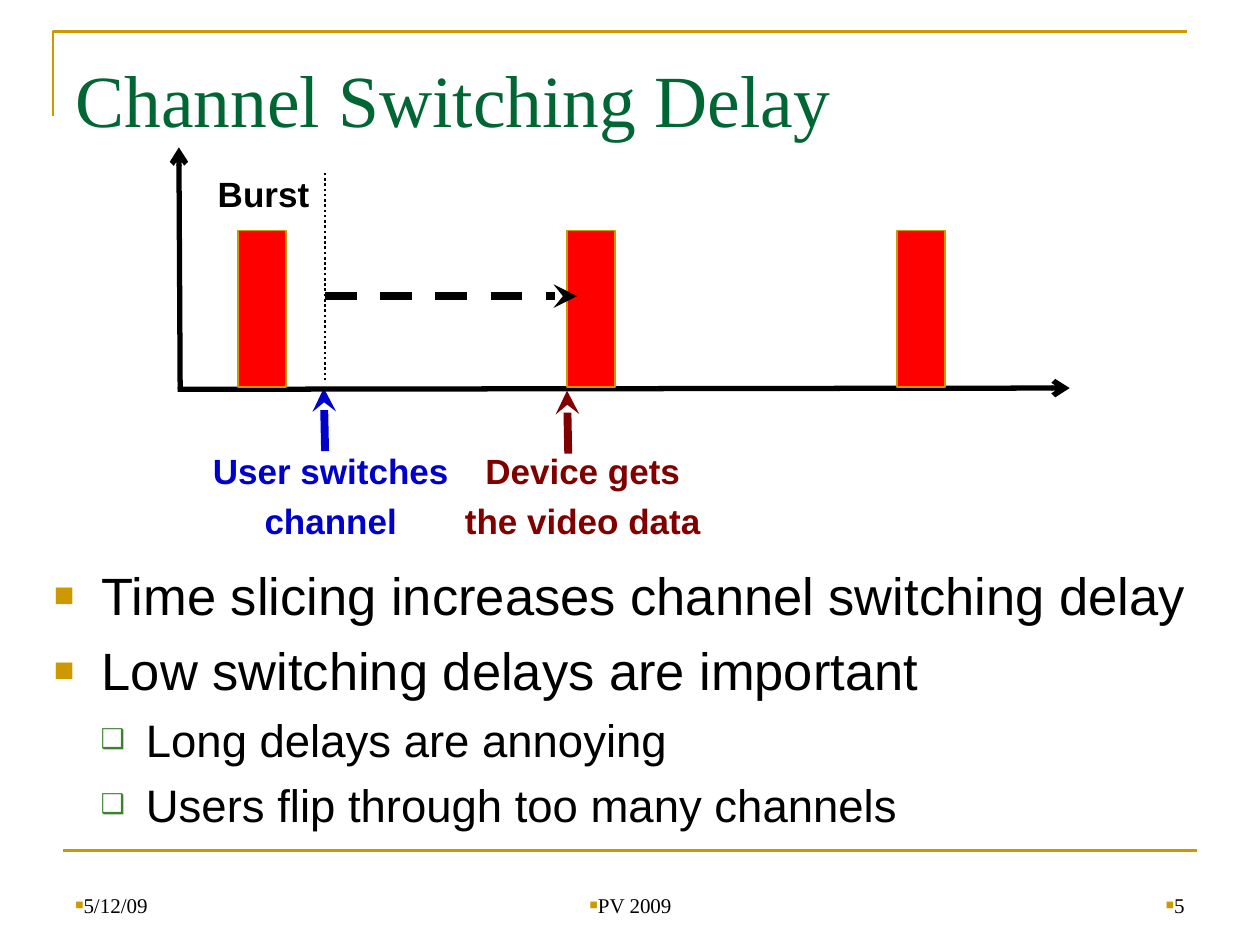
from dataclasses import dataclass
from typing import Optional

from lxml.etree import SubElement
from pptx import Presentation
from pptx.dml.color import RGBColor
from pptx.enum.dml import MSO_LINE_DASH_STYLE as Dash
from pptx.enum.shapes import MSO_CONNECTOR as Connector, MSO_SHAPE as Shape
from pptx.enum.text import MSO_ANCHOR as Anchor, PP_ALIGN as Align
from pptx.oxml.ns import qn
from pptx.util import Inches, Pt


@dataclass(frozen=True)
class Theme:
    gold: str = "CC9900"
    title: str = "006633"
    green: str = "3B812F"
    black: str = "000000"
    blue: str = "0000CC"
    maroon: str = "800000"
    red: str = "FF0000"
    serif: str = "Times New Roman"
    sans: str = "Arial"
    title_size: float = 42
    body_size: float = 30
    sub_size: float = 26
    label_size: float = 20
    footer_size: float = 12
    space_before: float = 0.23  # share of the type size


THEME = Theme()


@dataclass(frozen=True)
class Bullet:
    character: str
    color: str
    percent: int
    left: float = 0
    hanging: float = 0


@dataclass(frozen=True)
class Line:
    text: str
    size: float
    color: str = THEME.black
    font: str = THEME.sans
    bold: bool = False
    align: Align = Align.LEFT
    spaced: bool = True
    level: int = 0
    bullet: Optional[Bullet] = None


@dataclass(frozen=True)
class Arrow:
    start: tuple[float, float]
    end: tuple[float, float]
    color: str
    width: float
    head: Optional[str] = None
    dash: Optional[Dash] = None


def add_bullet(paragraph, bullet: Bullet) -> None:
    properties = paragraph._p.get_or_add_pPr()
    properties.set("marL", str(Inches(bullet.left)))
    properties.set("indent", str(Inches(-bullet.hanging)))
    color = SubElement(properties, qn("a:buClr"))
    SubElement(color, qn("a:srgbClr"), val=bullet.color)
    SubElement(properties, qn("a:buSzPct"), val=str(bullet.percent * 1000))
    SubElement(properties, qn("a:buFont"), typeface=THEME.sans)
    SubElement(properties, qn("a:buChar"), char=bullet.character)


def add_text(slide, box: tuple[float, float, float, float], lines: list[Line],
             wrap: bool = True, anchor: Anchor = Anchor.TOP, top_inset: float = 0.05) -> None:
    text_frame = slide.shapes.add_textbox(*map(Inches, box)).text_frame
    text_frame.word_wrap = wrap
    text_frame.vertical_anchor = anchor
    text_frame.margin_top = Inches(top_inset)
    text_frame.text = "\n".join(line.text for line in lines)
    for paragraph, line in zip(text_frame.paragraphs, lines):
        paragraph.alignment = line.align
        paragraph.level = line.level
        if line.spaced:
            paragraph.space_before = Pt(round(line.size * THEME.space_before, 1))
        if line.bullet:
            add_bullet(paragraph, line.bullet)
        for run in paragraph.runs:
            run.font.name = line.font
            run.font.size = Pt(line.size)
            run.font.bold = line.bold
            run.font.color.rgb = RGBColor.from_string(line.color)


def add_line(slide, arrow: Arrow) -> None:
    connector = slide.shapes.add_connector(
        Connector.STRAIGHT, *map(Inches, arrow.start + arrow.end))
    connector.line.color.rgb = RGBColor.from_string(arrow.color)
    connector.line.width = Pt(arrow.width)
    if arrow.dash:
        connector.line.dash_style = arrow.dash
    if arrow.head:
        SubElement(connector.line._get_or_add_ln(), qn("a:tailEnd"), type=arrow.head)
    SubElement(connector._element.spPr, qn("a:effectLst"))


def add_frame(slide) -> None:
    builder = slide.shapes.build_freeform(Inches(0.42), Inches(0.92))
    builder.add_line_segments(
        [(Inches(0.42), Inches(0.25)), (Inches(9.42), Inches(0.25))], close=False)
    corner = builder.convert_to_shape()
    corner.shadow.inherit = False
    corner.fill.background()
    corner.line.color.rgb = RGBColor.from_string(THEME.gold)
    corner.line.width = Pt(1.5)
    add_line(slide, Arrow((0.5, 6.75), (9.5, 6.75), THEME.gold, 1.5))


def add_burst(slide, left: float) -> None:
    burst = slide.shapes.add_shape(
        Shape.RECTANGLE, *map(Inches, (left, 1.83, 0.38, 1.24)))
    burst.shadow.inherit = False
    burst.fill.solid()
    burst.fill.fore_color.rgb = RGBColor.from_string(THEME.red)
    burst.line.color.rgb = RGBColor.from_string(THEME.gold)
    burst.line.width = Pt(1)


def add_label(slide, box: tuple[float, float, float, float], texts: list[str],
              color: str, align: Align = Align.CENTER) -> None:
    add_text(slide, box, [Line(text, THEME.label_size, color, bold=True, align=align)
                          for text in texts], wrap=False)


def add_timeline(slide) -> None:
    # Moment of the channel switch
    add_line(slide, Arrow((2.58, 3.58), (2.57, 3.08), THEME.blue, 4.5, "stealth"))
    add_label(slide, (1.58, 3.52, 2.09, 0.84), ["User switches ", "channel"], THEME.blue)
    add_line(slide, Arrow((2.58, 3.02), (2.58, 1.36), THEME.black, 1.5, dash=Dash.ROUND_DOT))

    # Axes and evenly spaced bursts
    for start, end in (((1.41, 3.09), (8.49, 3.08)), ((1.43, 3.09), (1.42, 1.17))):
        add_line(slide, Arrow(start, end, THEME.black, 3, "arrow"))
    for index in range(3):
        add_burst(slide, round(1.89 + index * 2.615, 2))
    add_label(slide, (1.63, 1.32, 0.93, 0.44), ["Burst"], THEME.black, Align.LEFT)

    # Delay until the next burst
    add_line(slide, Arrow((2.58, 2.35), (4.58, 2.35), THEME.black, 4.5, "stealth", Dash.DASH))
    add_label(slide, (3.58, 3.52, 2.09, 0.84), ["Device gets", "the video data"], THEME.maroon)
    add_line(slide, Arrow((4.51, 3.6), (4.5, 3.1), THEME.maroon, 4.5, "stealth"))


def add_body(slide) -> None:
    main = Bullet("■", THEME.gold, 65, 0.38, 0.38)
    sub = Bullet("❑", THEME.green, 60, 0.73, 0.36)
    points = [Line(text, THEME.body_size, bullet=main) for text in (
        "Time slicing increases channel switching delay",
        "Low switching delays are important")]
    points += [Line(text, THEME.sub_size, level=1, bullet=sub) for text in (
        "Long delays are annoying", "Users flip through too many channels")]
    add_text(slide, (0.33, 4.42, 9.33, 2.12), points)


def add_footer(slide) -> None:
    bullet = Bullet("■", THEME.gold, 65)
    for text, left, width, align in (("5/12/09", 0.5, 2.33, Align.LEFT),
                                     ("PV 2009", 3.42, 3.17, Align.CENTER),
                                     ("5", 7.17, 2.33, Align.RIGHT)):
        line = Line(text, THEME.footer_size, font=THEME.serif, align=align,
                    spaced=False, bullet=bullet)
        add_text(slide, (left, 6.83, width, 0.5), [line], anchor=Anchor.BOTTOM)


def main() -> None:
    presentation = Presentation()
    presentation.slide_width = Inches(10)
    presentation.slide_height = Inches(7.5)
    slide = presentation.slides.add_slide(presentation.slide_layouts[6])

    add_frame(slide)
    title = Line("Channel Switching Delay", THEME.title_size, THEME.title,
                 THEME.serif, spaced=False)
    add_text(slide, (0.5, 0.3, 9, 1.25), [title], top_inset=0.13)
    add_body(slide)
    add_footer(slide)
    add_timeline(slide)
    presentation.save("out.pptx")


if __name__ == "__main__":
    main()
